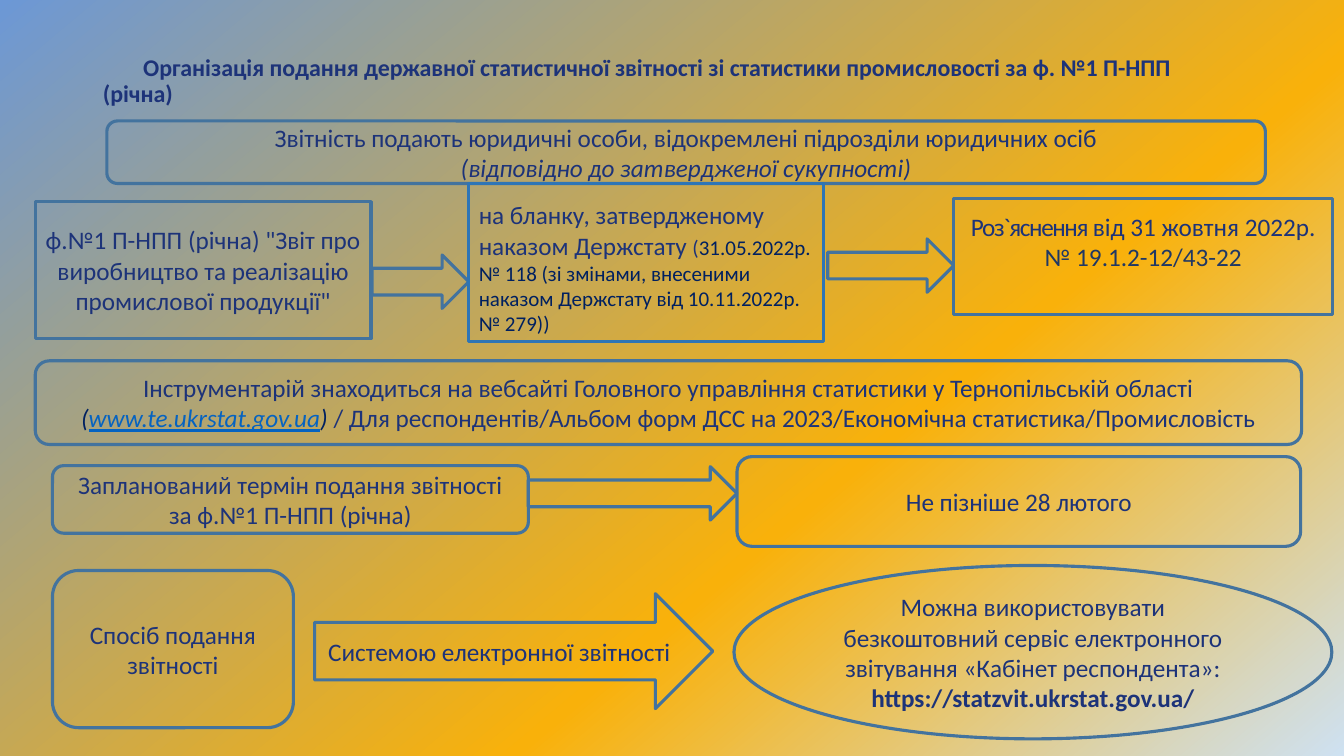
from dataclasses import dataclass
from copy import deepcopy

from pptx import Presentation
from pptx.dml.color import RGBColor
from pptx.enum.shapes import MSO_SHAPE as Kind
from pptx.enum.text import MSO_ANCHOR as Anchor, MSO_AUTO_SIZE as AutoSize, PP_ALIGN as Align
from pptx.oxml.ns import qn
from pptx.slide import Slide
from pptx.util import Inches, Pt


@dataclass(frozen=True)
class Theme:
    """Colours, font and sizes of the slide."""
    font: str = "Calibri"
    ink: str = "1D3379"
    navy: str = "002060"
    slate: str = "203864"
    link: str = "0563C1"
    outline: str = "43739E"
    bright_outline: str = "2E75B6"
    gradient: tuple[tuple[int, str], ...] = ((0, "6C98D6"), (63, "F9B10A"), (100, "CEE1F2"))
    gradient_angle: int = 310
    title_size: float = 17.1
    body_size: float = 18
    small_size: float = 15
    line_width: float = 2.25


THEME = Theme()


@dataclass(frozen=True)
class Span:
    """A stretch of text with one format."""
    text: str
    color: str = THEME.ink
    size: float = THEME.body_size
    bold: bool = False
    italic: bool = False
    underline: bool = False
    spacing: int = 0


@dataclass(frozen=True)
class Box:
    """An outlined shape with its paragraphs."""
    kind: Kind
    left: float
    top: float
    width: float
    height: float
    paras: tuple[tuple[Span, ...], ...] = ()
    align: Align = Align.CENTER
    outline: str = THEME.outline
    margin_top: float = 0.05
    margin_bottom: float = 0.05


BOXES = (
    Box(Kind.ROUNDED_RECTANGLE, 1.06, 1.2, 11.49, 0.62, (
        (Span("Звітність подають юридичні особи, відокремлені підрозділи юридичних осіб"),),
        (Span("(відповідно до затвердженої сукупності)", italic=True),))),
    Box(Kind.RECTANGLE, 0.35, 2, 3.33, 1.36, (
        (Span('ф.№1 П-НПП (річна) "Звіт про виробництво та реалізацію промислової продукції"'),),)),
    Box(Kind.RIGHT_ARROW, 3.69, 2.53, 0.96, 0.53),
    Box(Kind.RECTANGLE, 4.65, 1.82, 3.52, 1.57, (
        (Span("на бланку, затвердженому наказом Держстату "),
         Span("(", size=THEME.small_size),
         Span("31.05.2022р. № 118 (зі змінами, внесеними наказом Держстату від 10.11.2022р. № 279))",
              THEME.navy, THEME.small_size)),),
        Align.LEFT, THEME.bright_outline, margin_top=0.15),
    Box(Kind.RIGHT_ARROW, 8.21, 2.37, 1.25, 0.53),
    Box(Kind.RECTANGLE, 9.46, 1.97, 3.76, 1.15, (
        (Span("Роз`яснення ", spacing=-100), Span("від 31 жовтня 2022р.")),
        (Span("№ 19.1.2-12/43-22", THEME.slate),)), margin_bottom=0.35),
    Box(Kind.ROUNDED_RECTANGLE, 0.35, 3.58, 12.56, 0.83, (
        (Span("Інструментарій знаходиться на вебсайті Головного управління статистики "
              "у Тернопільській області"),
         Span(" (", THEME.navy, italic=True),
         Span("www.te.ukrstat.gov.ua", THEME.link, italic=True, underline=True),
         Span(") ", THEME.navy, italic=True),
         Span("/ Для респондентів/Альбом форм ДСС на 2023/Економічна статистика/Промисловість")),)),
    Box(Kind.ROUNDED_RECTANGLE, 0.52, 4.62, 4.72, 0.67, (
        (Span("Запланований термін подання звітності"),),
        (Span("за ф.№1 П-НПП (річна)"),))),
    Box(Kind.RIGHT_ARROW, 5.24, 4.63, 2.07, 0.53),
    Box(Kind.ROUNDED_RECTANGLE, 7.31, 4.53, 5.59, 0.89, ((Span("Не пізніше 28 лютого"),),)),
    Box(Kind.ROUNDED_RECTANGLE, 0.52, 5.66, 2.39, 1.56, ((Span("Спосіб подання звітності"),),)),
    Box(Kind.RIGHT_ARROW, 3.12, 5.89, 3.95, 1.14, ((Span("Системою електронної звітності"),),)),
    Box(Kind.OVAL, 7.28, 5.61, 5.93, 1.72, (
        (Span("Можна використовувати безкоштовний сервіс електронного звітування "
              "«Кабінет респондента»: "),
         Span("https://statzvit.ukrstat.gov.ua/", bold=True)),)),
)


def add_span(para, span: Span) -> None:
    """Append a formatted run to a paragraph."""
    run = para.add_run()
    run.text = span.text
    font = run.font
    font.name, font.size = THEME.font, Pt(span.size)
    font.bold, font.italic, font.underline = span.bold, span.italic, span.underline
    font.color.rgb = RGBColor.from_string(span.color)
    if span.spacing:
        run._r.get_or_add_rPr().set("spc", str(span.spacing))


def add_box(slide: Slide, box: Box) -> None:
    """Draw one outlined shape and its text."""
    shape = slide.shapes.add_shape(
        box.kind, Inches(box.left), Inches(box.top), Inches(box.width), Inches(box.height))
    shape.shadow.inherit = False
    shape.fill.background()
    shape.line.color.rgb = RGBColor.from_string(box.outline)
    shape.line.width = Pt(THEME.line_width)
    frame = shape.text_frame
    frame.word_wrap = True
    frame.vertical_anchor = Anchor.MIDDLE
    frame.margin_top, frame.margin_bottom = Inches(box.margin_top), Inches(box.margin_bottom)
    for index, spans in enumerate(box.paras):
        para = frame.add_paragraph() if index else frame.paragraphs[0]
        para.alignment = box.align
        for span in spans:
            add_span(para, span)


def paint_background(slide: Slide) -> None:
    """Fill the background with the diagonal gradient."""
    fill = slide.background.fill
    fill.gradient()
    fill.gradient_angle = THEME.gradient_angle
    stops = slide.background._cSld.find(".//" + qn("a:gsLst"))
    stops.append(deepcopy(stops[0]))
    for stop, (percent, color) in zip(fill.gradient_stops, THEME.gradient):
        stop.position = percent / 100
        stop.color.rgb = RGBColor.from_string(color)


def set_title(slide: Slide) -> None:
    """Place the title and indent its first line."""
    title = slide.shapes.title
    title.left, title.top = Inches(0.92), Inches(0.56)
    title.width, title.height = Inches(11.5), Inches(0.5)
    frame = title.text_frame
    frame.word_wrap = True
    frame.auto_size = AutoSize.NONE
    frame.vertical_anchor = Anchor.MIDDLE
    para = frame.paragraphs[0]
    para.alignment = Align.LEFT
    para.line_spacing = 0.9
    para._p.get_or_add_pPr().set("indent", str(Inches(0.4)))
    add_span(para, Span("Організація подання державної статистичної звітності зі статистики "
                        "промисловості за ф. №1 П-НПП (річна)", size=THEME.title_size, bold=True))


def main() -> None:
    """Build and save the deck."""
    deck = Presentation()
    deck.slide_width, deck.slide_height = Inches(13.33), Inches(7.5)
    slide = deck.slides.add_slide(deck.slide_layouts[5])
    paint_background(slide)
    set_title(slide)
    for box in BOXES:
        add_box(slide, box)
    deck.save("out.pptx")


if __name__ == "__main__":
    main()
